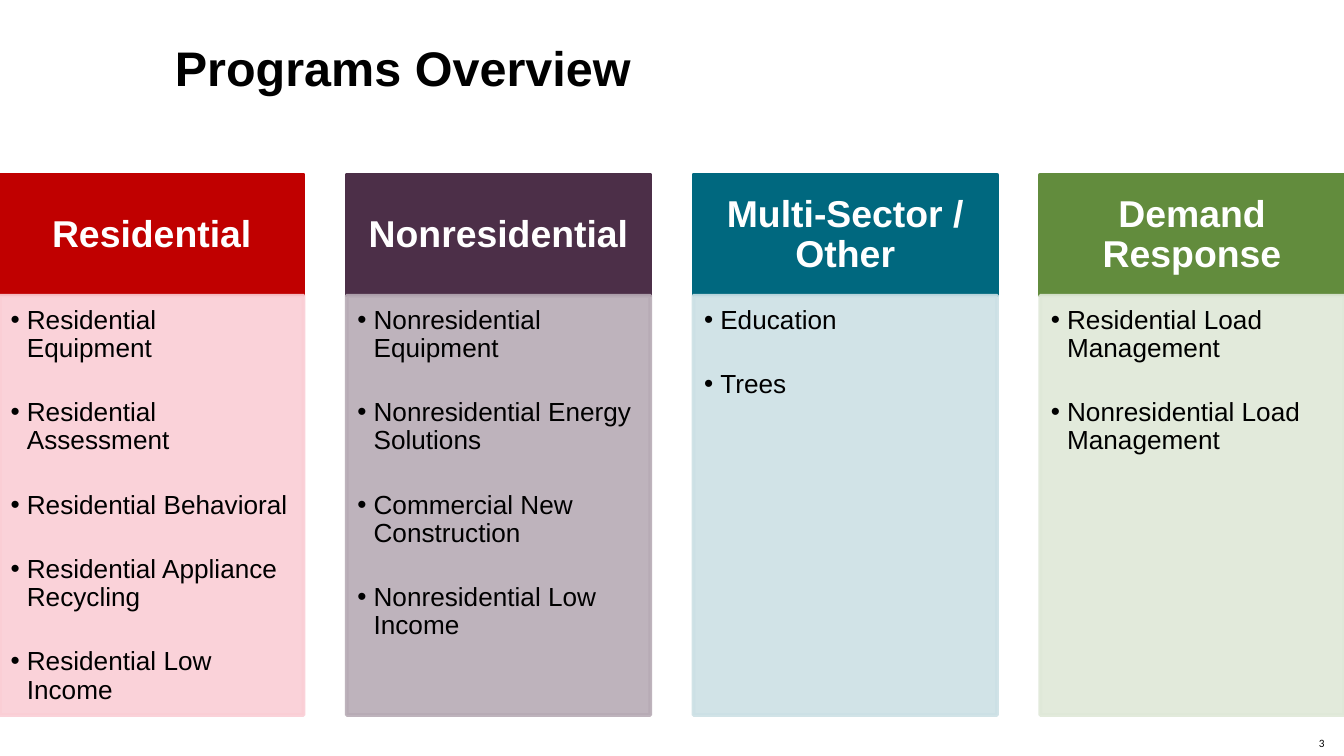
from lxml.etree import SubElement
from pptx import Presentation
from pptx.dml.color import RGBColor
from pptx.enum.shapes import MSO_SHAPE
from pptx.enum.text import MSO_ANCHOR, PP_ALIGN
from pptx.oxml.ns import qn
from pptx.util import Inches, Pt

BLACK = RGBColor(0x00, 0x00, 0x00)
WHITE = RGBColor(0xFF, 0xFF, 0xFF)
RED = RGBColor(0xC0, 0x00, 0x00)
PINK = RGBColor(0xFA, 0xCE, 0xD5)
PURPLE = RGBColor(0x4C, 0x2F, 0x48)
MAUVE = RGBColor(0xB7, 0xAB, 0xB5)
TEAL = RGBColor(0x00, 0x68, 0x7F)
PALE_TEAL = RGBColor(0xCC, 0xE0, 0xE5)
GREEN = RGBColor(0x62, 0x8C, 0x3D)
PALE_GREEN = RGBColor(0xDF, 0xE8, 0xD8)

COLUMN_WIDTH, COLUMN_PITCH = 2.26, 2.58
HEADER_TOP, HEADER_HEIGHT, LIST_HEIGHT = 1.3, 0.9, 3.12

PROGRAMS = [
    ("Residential", RED, PINK,
     ["Residential Equipment", "Residential Assessment", "Residential Behavioral",
      "Residential Appliance Recycling", "Residential Low Income"]),
    ("Nonresidential", PURPLE, MAUVE,
     ["Nonresidential Equipment", "Nonresidential Energy Solutions",
      "Commercial New Construction", "Nonresidential Low Income"]),
    ("Multi-Sector / Other", TEAL, PALE_TEAL, ["Education", "Trees"]),
    ("Demand Response", GREEN, PALE_GREEN,
     ["Residential Load Management", "Nonresidential Load Management"]),
]


def set_frame(frame, anchor, insets):
    frame.word_wrap = True
    frame.vertical_anchor = anchor
    (frame.margin_left, frame.margin_top,
     frame.margin_right, frame.margin_bottom) = [Inches(inset) for inset in insets]


def add_span(para, text, size, color=BLACK, bold=False, font="Arial"):
    span = para.add_run()
    span.text = text
    span.font.name = font
    span.font.size = Pt(size)
    span.font.bold = bold
    span.font.color.rgb = color


def add_label(page, text, left, top, width, height, size, **style):
    box = page.shapes.add_textbox(Inches(left), Inches(top), Inches(width), Inches(height))
    set_frame(box.text_frame, MSO_ANCHOR.MIDDLE, (0, 0, 0, 0))
    para = box.text_frame.paragraphs[0]
    para.alignment = PP_ALIGN.CENTER
    add_span(para, text, size, **style)
    return para


def add_panel(page, left, top, height, color, opacity=100):
    panel = page.shapes.add_shape(MSO_SHAPE.RECTANGLE, Inches(left), Inches(top),
                                  Inches(COLUMN_WIDTH), Inches(height))
    panel.shadow.inherit = False
    panel.fill.solid()
    panel.fill.fore_color.rgb = color
    panel.line.color.rgb = color
    panel.line.width = Pt(2)
    if opacity < 100:
        # Fill and outline share the same transparency
        for tone in panel._element.spPr.iter(qn("a:srgbClr")):
            SubElement(tone, qn("a:alpha"), val=str(opacity * 1000))
    return panel


def add_header(page, left, text, color):
    panel = add_panel(page, left, HEADER_TOP, HEADER_HEIGHT, color)
    set_frame(panel.text_frame, MSO_ANCHOR.MIDDLE, (0.16, 0.09, 0.16, 0.09))
    para = panel.text_frame.paragraphs[0]
    para.alignment = PP_ALIGN.CENTER
    para.line_spacing = 0.9
    add_span(para, text, 20, WHITE, bold=True)


def add_program_list(page, left, items, color):
    panel = add_panel(page, left, HEADER_TOP + HEADER_HEIGHT, LIST_HEIGHT, color, opacity=90)
    frame = panel.text_frame
    set_frame(frame, MSO_ANCHOR.TOP, (0.08, 0.08, 0.11, 0.12))
    for index, item in enumerate(items):
        para = frame.add_paragraph() if index else frame.paragraphs[0]
        para.alignment = PP_ALIGN.LEFT
        para.line_spacing = 0.9
        para.space_after = Pt(19.3)
        properties = para._p.get_or_add_pPr()
        properties.set("marL", str(Inches(0.12)))
        properties.set("indent", str(-Inches(0.12)))
        SubElement(properties, qn("a:buFont"), typeface="Arial")
        SubElement(properties, qn("a:buChar"), char="•")
        add_span(para, item, 14)


def main():
    # Widescreen page, 16 by 9
    deck = Presentation()
    deck.slide_width = Inches(10)
    deck.slide_height = Inches(10) * 9 // 16
    page = deck.slides.add_slide(deck.slide_layouts[6])

    # Title and page number
    title = add_label(page, "Programs Overview", 0, 0, 6, 1, 26, bold=True)
    title.line_spacing = Pt(31)
    add_label(page, "3", 9.67, 5.44, 0.33, 0.18, 6, font="Calibri")

    # One column per program group
    for index, (name, dark, light, items) in enumerate(PROGRAMS):
        left = index * COLUMN_PITCH
        add_header(page, left, name, dark)
        add_program_list(page, left, items, light)

    deck.save("out.pptx")


if __name__ == "__main__":
    main()
